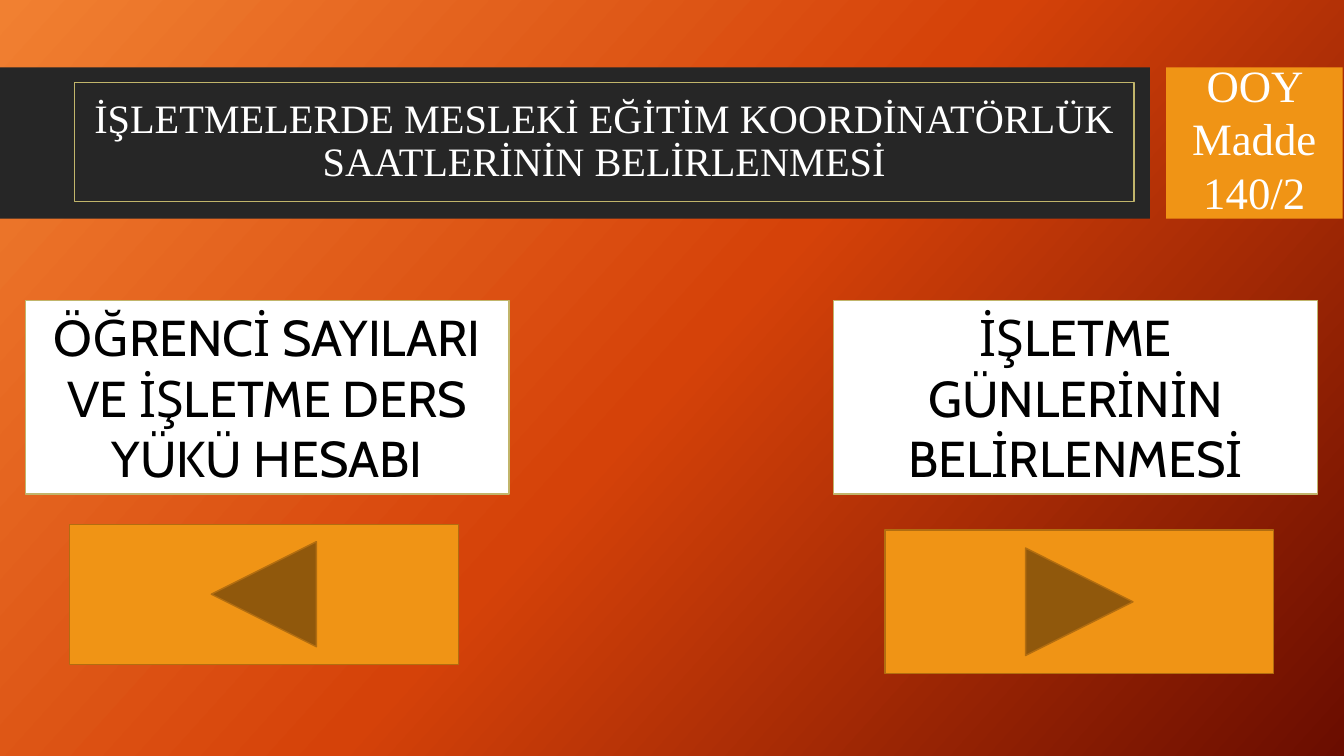
from copy import deepcopy
from dataclasses import dataclass

from pptx import Presentation
from pptx.dml.color import RGBColor as RGB
from pptx.enum.shapes import MSO_SHAPE as SHAPE
from pptx.enum.text import MSO_ANCHOR as ANCHOR, MSO_AUTO_SIZE as AUTO, PP_ALIGN as ALIGN
from pptx.oxml.ns import qn
from pptx.util import Cm, Pt


@dataclass(frozen=True)
class Theme:
    gradient: tuple = ((0, "F18031"), (0.5, "D54209"), (1, "6A0D00"))
    gradient_angle: int = 318  # counter-clockwise
    band: str = "262626"
    accent: str = "F09415"
    accent_line: str = "B26D10"
    frame: str = "C1B56B"
    light: str = "FFFFFF"
    dark: str = "000000"
    heading_font: str = "Times New Roman"
    body_font: str = "Cabin"
    title_size: float = 28.8
    article_size: float = 32
    box_size: float = 36


THEME = Theme()


def set_background(s):
    fill = s.background.fill
    fill.gradient()
    fill.gradient_angle = THEME.gradient_angle
    # A new gradient has two stops; add the third
    stops = s.element.find(".//" + qn("a:gsLst"))
    stops.append(deepcopy(stops[-1]))
    for stop, (position, color) in zip(fill.gradient_stops, THEME.gradient):
        stop.position = position
        stop.color.rgb = RGB.from_string(color)


def set_line(sp, color):
    sp.line.color.rgb = RGB.from_string(color)
    sp.line.width = Pt(1)


def set_text(sp, text, font, size, color, anchor=ANCHOR.MIDDLE):
    tf = sp.text_frame
    tf.word_wrap = True
    tf.auto_size = AUTO.NONE
    tf.vertical_anchor = anchor
    p = tf.paragraphs[0]
    p.text = text
    p.alignment = ALIGN.CENTER
    p.font.name = font
    p.font.size = Pt(size)
    p.font.color.rgb = RGB.from_string(color)
    return p


def add_block(s, kind, left, top, width, height, fill, line=None):
    sp = s.shapes.add_shape(kind, Cm(left), Cm(top), Cm(width), Cm(height))
    sp.shadow.inherit = False
    sp.fill.solid()
    sp.fill.fore_color.rgb = RGB.from_string(fill)
    if line:
        set_line(sp, line)
    else:
        sp.line.fill.background()
    return sp


def add_title(s, text):
    sp = s.shapes.title
    sp.left, sp.top, sp.width, sp.height = Cm(1.88), Cm(2.08), Cm(26.7), Cm(3)
    set_line(sp, THEME.frame)
    p = set_text(sp, text, THEME.heading_font, THEME.title_size, THEME.light)
    p.line_spacing = 0.9


def add_band(s, left, width, color):
    sp = add_block(s, SHAPE.RECTANGLE, left, 1.7, width, 3.81, color)
    s.shapes.title.element.addprevious(sp.element)  # behind the title


def add_article(s, text):
    sp = s.shapes.add_textbox(Cm(29.36), Cm(1.32), Cm(4.5), Cm(4.37))
    set_text(sp, text, THEME.heading_font, THEME.article_size, THEME.light, ANCHOR.TOP)


def add_topic(s, left, text):
    sp = add_block(s, SHAPE.RECTANGLE, left, 7.57, 12.19, 4.88, THEME.light, THEME.frame)
    set_text(sp, text, THEME.body_font, THEME.box_size, THEME.dark)


def add_button(s, kind, left, top, height):
    add_block(s, kind, left, top, 9.8, height, THEME.accent, THEME.accent_line)


def main():
    prs = Presentation()
    prs.slide_width, prs.slide_height = Cm(33.87), Cm(19.05)
    s = prs.slides.add_slide(prs.slide_layouts[5])
    set_background(s)

    # Header
    add_band(s, 0, 28.98, THEME.band)
    add_band(s, 29.39, 4.45, THEME.accent)
    add_title(s, "İŞLETMELERDE MESLEKİ EĞİTİM KOORDİNATÖRLÜK SAATLERİNİN BELİRLENMESİ")
    add_article(s, "OOY Madde 140/2")

    # Navigation buttons
    add_button(s, SHAPE.ACTION_BUTTON_FORWARD_OR_NEXT, 22.3, 13.36, 3.61)
    add_button(s, SHAPE.ACTION_BUTTON_BACK_OR_PREVIOUS, 1.75, 13.21, 3.53)

    # Topics
    add_topic(s, 21.01, "İŞLETME GÜNLERİNİN BELİRLENMESİ")
    add_topic(s, 0.64, "ÖĞRENCİ SAYILARI VE İŞLETME DERS YÜKÜ HESABI")

    prs.save("out.pptx")


if __name__ == "__main__":
    main()
